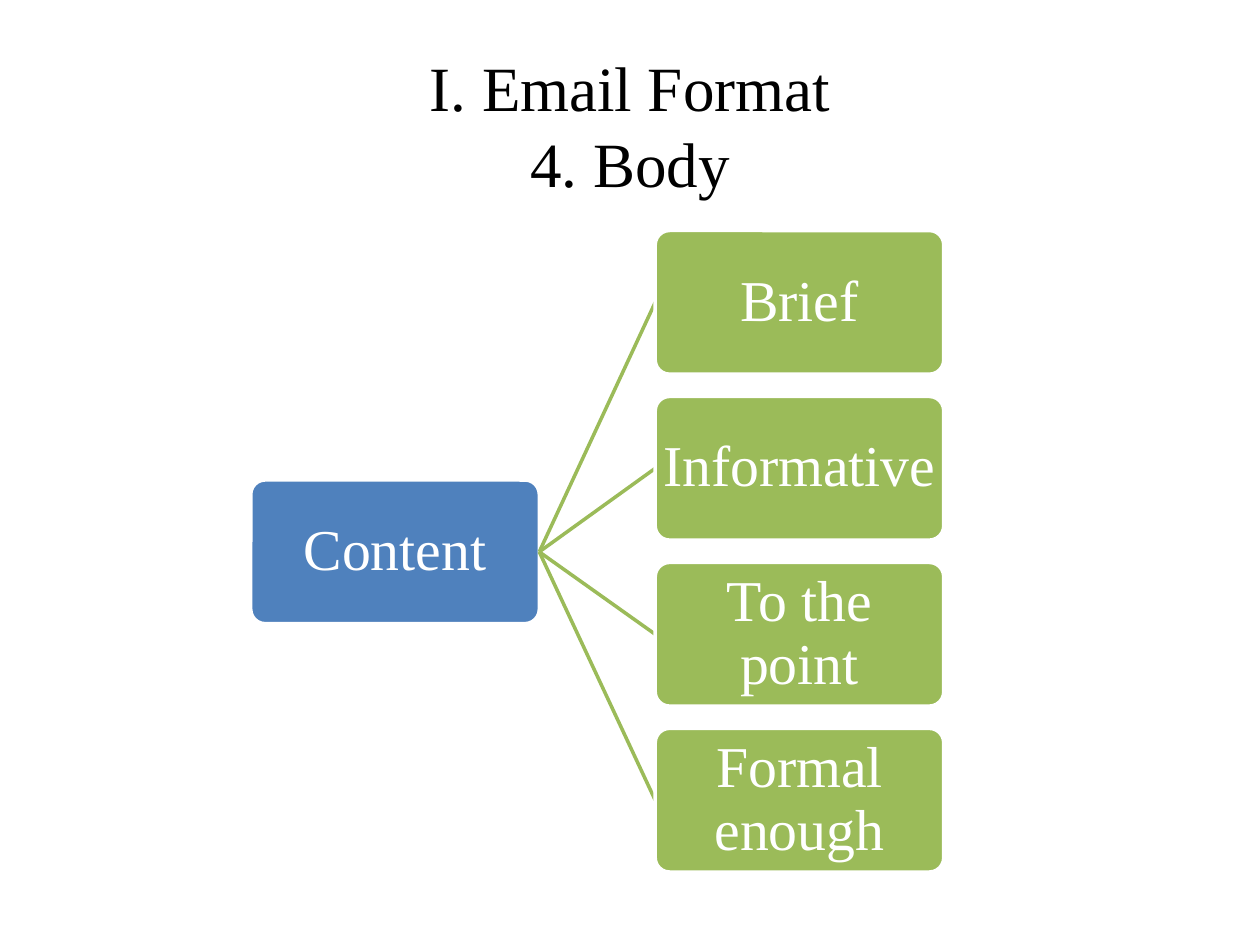
import pptx
import pptx.util
import pptx.dml.color
import pptx.enum.shapes
import pptx.enum.text
import lxml.etree
from dataclasses import dataclass

Inches = pptx.util.Inches


@dataclass(frozen=True)
class Theme:
    font: str = "Times New Roman"
    black: str = "000000"
    white: str = "FFFFFF"
    blue: str = "4F81BD"
    green: str = "9BBB59"
    title_size: int = 36
    box_size: int = 33
    line_width: int = 2


theme = Theme()


def write_text(frame, text, size, color, spacing=1.0, inset=None):
    frame.word_wrap = True
    frame.auto_size = pptx.enum.text.MSO_AUTO_SIZE.NONE
    frame.vertical_anchor = pptx.enum.text.MSO_ANCHOR.MIDDLE
    if inset is not None:
        frame.margin_left = frame.margin_right = Inches(inset)
        frame.margin_top = frame.margin_bottom = Inches(inset)
    para = frame.paragraphs[0]
    para.alignment = pptx.enum.text.PP_ALIGN.CENTER
    para.line_spacing = spacing
    para.text = text
    for span in para.runs:
        span.font.name = theme.font
        span.font.size = pptx.util.Pt(size)
        span.font.color.rgb = pptx.dml.color.RGBColor.from_string(color)


def add_box(page, text, left, top, fill):
    box = page.shapes.add_shape(
        pptx.enum.shapes.MSO_SHAPE.ROUNDED_RECTANGLE,
        Inches(left), Inches(top), Inches(box_width), Inches(box_height))
    box.adjustments[0] = 0.1
    box.shadow.inherit = False
    box.fill.solid()
    box.fill.fore_color.rgb = pptx.dml.color.RGBColor.from_string(fill)
    box.line.color.rgb = pptx.dml.color.RGBColor.from_string(theme.white)
    box.line.width = pptx.util.Pt(theme.line_width)
    write_text(box.text_frame, text, theme.box_size, theme.white, spacing=0.9, inset=0.02)


deck = pptx.Presentation()
deck.slide_width, deck.slide_height = Inches(10), Inches(7.5)
page = deck.slides.add_slide(deck.slide_layouts[5])

title = page.shapes.title
title.left, title.top = Inches(0.5), Inches(0.58)
title.width, title.height = Inches(9), Inches(0.81)
write_text(title.text_frame, "I. Email Format\n4. Body", theme.title_size, theme.black)

box_width, box_height = 2.29, 1.14
root_left, root_top = 1.99, 3.81
branch_left, branch_top, branch_pitch = 5.2, 1.83, 1.317
qualities = ["Brief", "Informative", "To the point", "Formal enough"]

add_box(page, "Content", root_left, root_top, theme.blue)
for index, quality in enumerate(qualities):
    top = branch_top + index * branch_pitch
    branch = page.shapes.add_connector(
        pptx.enum.shapes.MSO_CONNECTOR.STRAIGHT,
        Inches(root_left + box_width), Inches(root_top + box_height / 2),
        Inches(branch_left), Inches(top + box_height / 2))
    branch.line.color.rgb = pptx.dml.color.RGBColor.from_string(theme.green)
    branch.line.width = pptx.util.Pt(theme.line_width)
    properties = branch.element.spPr
    lxml.etree.SubElement(properties, pptx.oxml.ns.qn("a:effectLst"))
    add_box(page, quality, branch_left, top, theme.green)

deck.save("out.pptx")
